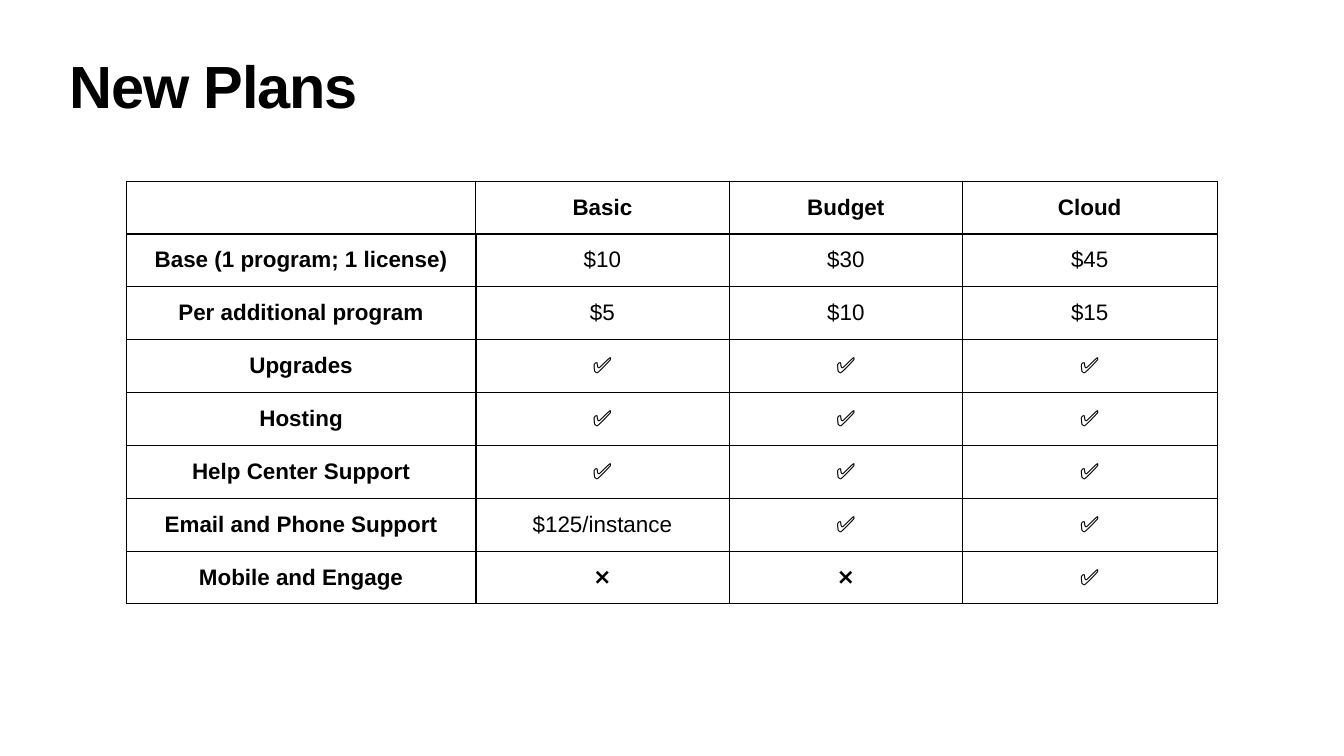
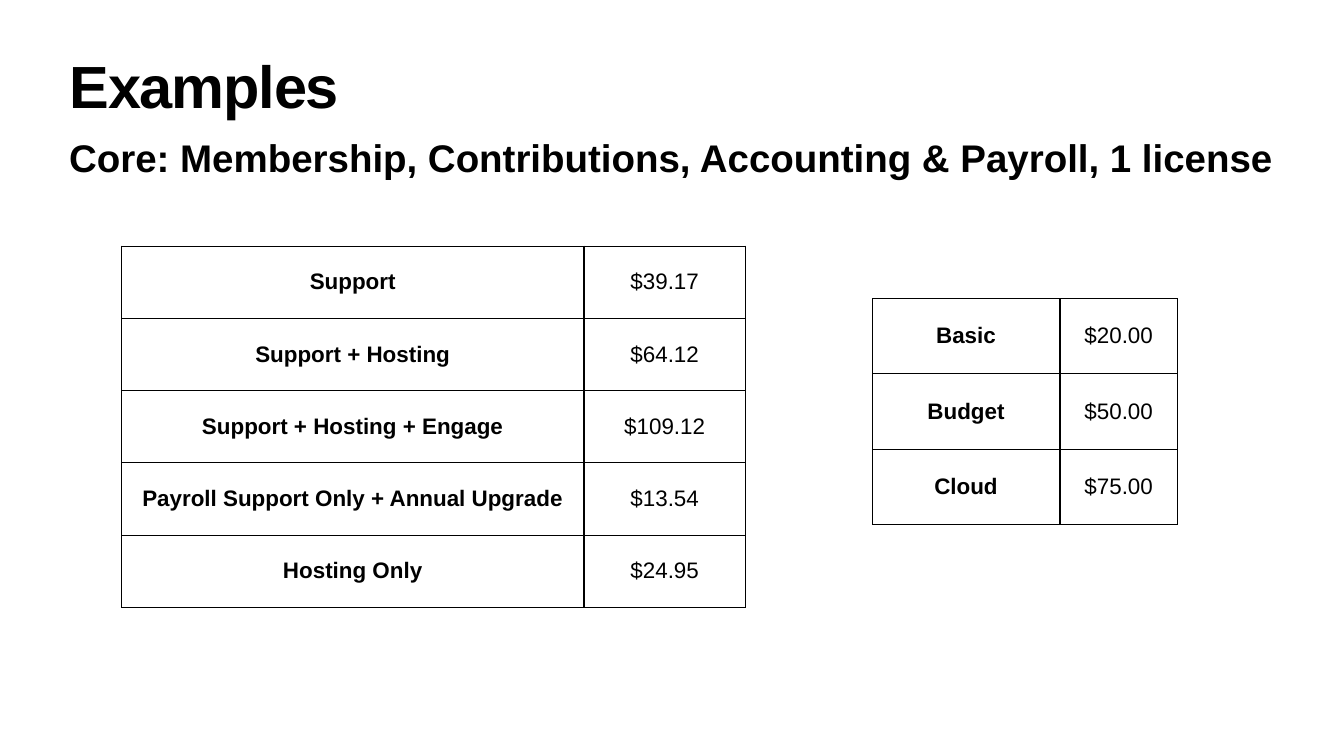
from dataclasses import dataclass

from lxml import etree
from pptx import Presentation
from pptx.dml.color import RGBColor
from pptx.enum.text import MSO_ANCHOR, MSO_AUTO_SIZE, PP_ALIGN
from pptx.oxml.ns import qn
from pptx.util import Inches, Pt

TOP, MIDDLE = MSO_ANCHOR.TOP, MSO_ANCHOR.MIDDLE
LEFT, CENTER = PP_ALIGN.LEFT, PP_ALIGN.CENTER
NO_FIT = MSO_AUTO_SIZE.NONE
TITLE_ONLY = 5


@dataclass(frozen=True)
class Theme:
    font: str = "Arial"
    ink: str = "000000"
    title_size: int = 85
    title_tracking: float = -1.7
    title_leading: float = 0.8
    subtitle_size: int = 55
    cell_size: int = 32
    inset: float = 0.06
    subtitle_inset: float = 0.05
    rule: int = 1
    heavy_rule: int = 3


THEME = Theme()
TITLE_BOX = (1.32, 1.18, 24.03, 1.57)
SUBTITLE_BOX = (1.32, 2.6, 24.03, 1.02)

YES, NO = "✅", "❌"
PLANS = [
    ["", "Basic", "Budget", "Cloud"],
    ["Base (1 program; 1 license)", "$10", "$30", "$45"],
    ["Per additional program", "$5", "$10", "$15"],
    ["Upgrades", YES, YES, YES],
    ["Hosting", YES, YES, YES],
    ["Help Center Support", YES, YES, YES],
    ["Email and Phone Support", "$125/instance", YES, YES],
    ["Mobile and Engage", NO, NO, YES],
]
CURRENT_PRICES = [
    ["Support", "$39.17"],
    ["Support + Hosting", "$64.12"],
    ["Support + Hosting + Engage", "$109.12"],
    ["Payroll Support Only + Annual Upgrade", "$13.54"],
    ["Hosting Only", "$24.95"],
]
NEW_PRICES = [["Basic", "$20.00"], ["Budget", "$50.00"], ["Cloud", "$75.00"]]


def add_run(p, text, size, bold):
    r = p.add_run()
    r.text = text
    r.font.name = THEME.font
    r.font.size = Pt(size)
    r.font.bold = bold
    r.font.color.rgb = RGBColor.from_string(THEME.ink)
    return r


def set_margins(target, inset):
    target.margin_left = target.margin_right = Inches(inset)
    target.margin_top = target.margin_bottom = Inches(inset)


def prepare_frame(sp, inset):
    tf = sp.text_frame
    tf.word_wrap = True
    tf.auto_size = NO_FIT
    tf.vertical_anchor = TOP
    set_margins(tf, inset)
    p = tf.paragraphs[0]
    p.alignment = LEFT
    return p


def add_title(s, text, box):
    sp = s.shapes.title
    sp.left, sp.top, sp.width, sp.height = map(Inches, box)
    p = prepare_frame(sp, THEME.inset)
    p.line_spacing = THEME.title_leading
    r = add_run(p, text, THEME.title_size, True)
    r.font._element.set("spc", str(round(THEME.title_tracking * 100)))


def add_subtitle(s, text, box):
    sp = s.shapes.add_textbox(*map(Inches, box))
    p = prepare_frame(sp, THEME.subtitle_inset)
    add_run(p, text, THEME.subtitle_size, True)


def set_borders(cell, right, bottom):
    tc_pr = cell._tc.get_or_add_tcPr()
    widths = {"L": THEME.rule, "R": right, "T": THEME.rule, "B": bottom}
    for side, width in widths.items():
        ln = etree.SubElement(tc_pr, qn(f"a:ln{side}"), w=str(Pt(width)))
        fill = etree.SubElement(ln, qn("a:solidFill"))
        etree.SubElement(fill, qn("a:srgbClr"), val=THEME.ink)


def fill_cell(cell, text, is_header, is_label):
    set_borders(
        cell,
        right=THEME.heavy_rule if is_label else THEME.rule,
        bottom=THEME.heavy_rule if is_header else THEME.rule,
    )
    cell.fill.background()
    cell.vertical_anchor = MIDDLE
    set_margins(cell, THEME.inset)
    if text:
        p = cell.text_frame.paragraphs[0]
        p.alignment = CENTER
        add_run(p, text, THEME.cell_size, is_header or is_label)


def add_price_table(s, rows, left, top, height, col_widths, has_header=False):
    frame = s.shapes.add_table(
        len(rows), len(col_widths),
        Inches(left), Inches(top), Inches(sum(col_widths)), Inches(height),
    )
    table = frame.table
    table.first_row = has_header
    table.horz_banding = False
    for column, width in zip(table.columns, col_widths):
        column.width = Inches(width)
    for i, row in enumerate(rows):
        for j, text in enumerate(row):
            is_header = has_header and i == 0
            fill_cell(table.cell(i, j), text, is_header, j == 0 and not is_header)


def add_titled_slide(prs, title):
    s = prs.slides.add_slide(prs.slide_layouts[TITLE_ONLY])
    add_title(s, title, TITLE_BOX)
    return s


def build_plans(prs):
    s = add_titled_slide(prs, "New Plans")
    add_price_table(s, PLANS, 2.51, 3.59, 8.39, [6.93, 5.03, 4.63, 5.05], True)


def build_examples(prs):
    s = add_titled_slide(prs, "Examples")
    add_subtitle(
        s,
        "Core: Membership, Contributions, Accounting & Payroll, 1 license",
        SUBTITLE_BOX,
    )
    add_price_table(s, CURRENT_PRICES, 2.41, 4.88, 7.17, [9.18, 3.2])
    add_price_table(s, NEW_PRICES, 17.31, 5.92, 4.49, [3.72, 2.34])


def main():
    prs = Presentation()
    prs.slide_width = Inches(26.67)
    prs.slide_height = Inches(15)
    build_plans(prs)
    build_examples(prs)
    prs.save("out.pptx")


if __name__ == "__main__":
    main()
